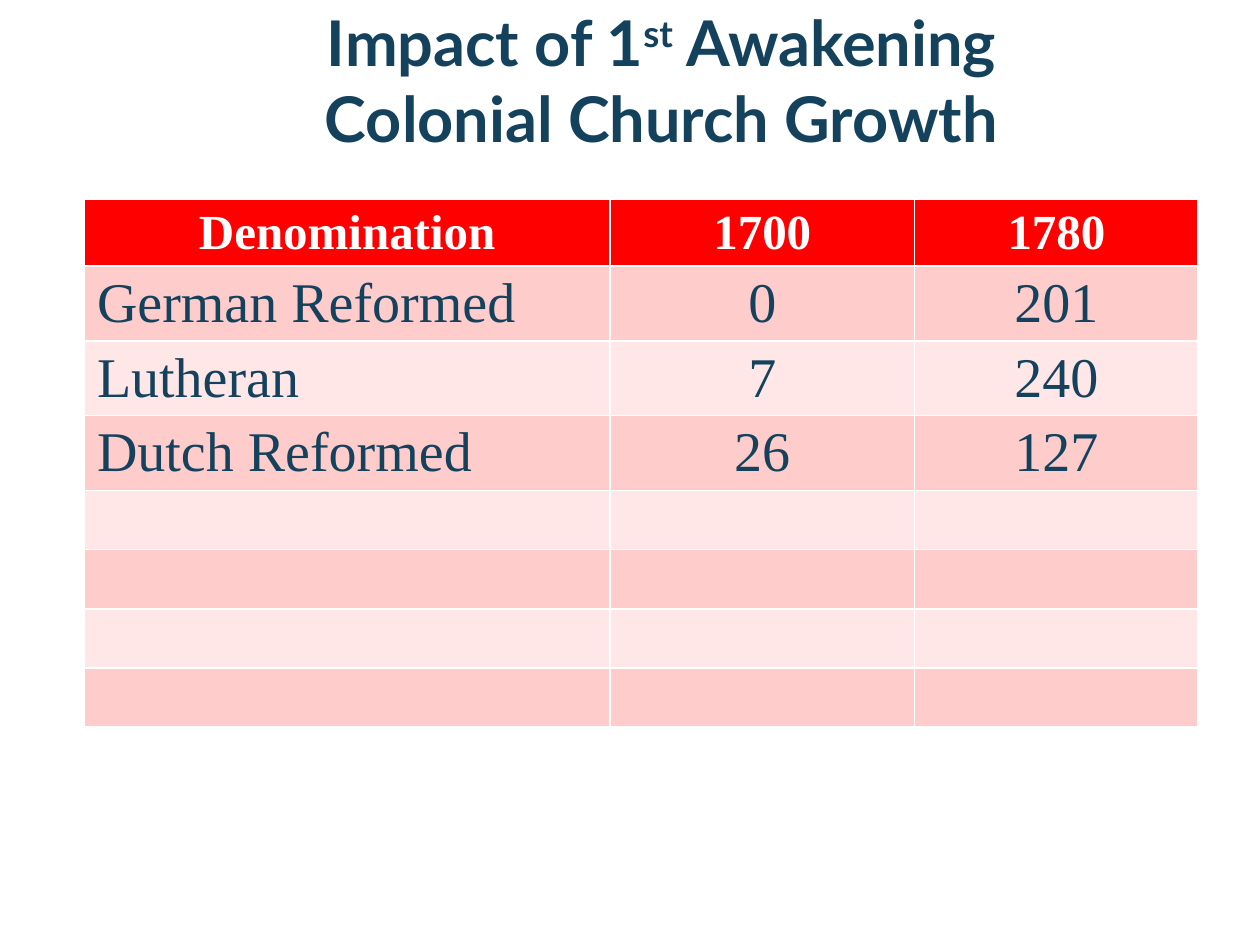
from pptx import Presentation
from pptx.dml.color import RGBColor
from pptx.enum.text import MSO_ANCHOR, PP_ALIGN
from pptx.util import Inches, Pt

CENTER = PP_ALIGN.CENTER
LEFT = PP_ALIGN.LEFT
BOTTOM = MSO_ANCHOR.BOTTOM

COLORS = {
    "navy": "14425D",
    "white": "FFFFFF",
    "header": "FF0000",
    "dark_band": "FFCCCC",
    "light_band": "FFE7E7",
}


def add_run(paragraph, text, font_name, size, color, bold):
    run = paragraph.add_run()
    run.text = text
    run.font.name = font_name
    run.font.size = Pt(size)
    run.font.bold = bold
    run.font.color.rgb = RGBColor.from_string(COLORS[color])
    return run


presentation = Presentation()
presentation.slide_width = Inches(10)
presentation.slide_height = Inches(7.5)
slide = presentation.slides.add_slide(presentation.slide_layouts[5])

title = slide.shapes.title
title.left, title.top = Inches(1), Inches(0.08)
title.width, title.height = Inches(8.5), Inches(1.25)
title_frame = title.text_frame
title_frame.word_wrap = True
title_frame.vertical_anchor = BOTTOM
title_frame.margin_left = title_frame.margin_right = Inches(0.1)
title_frame.margin_top, title_frame.margin_bottom = Inches(0.05), Inches(0.1)
title_paragraph = title_frame.paragraphs[0]
title_paragraph.alignment = CENTER
add_run(title_paragraph, "Impact of 1", "Lato", 36, "navy", True)
ordinal = add_run(title_paragraph, "st", "Lato", 36, "navy", True)
ordinal.font._element.set("baseline", "30000")
add_run(title_paragraph, " Awakening", "Lato", 36, "navy", True)
title_paragraph.add_line_break()
add_run(title_paragraph, "Colonial Church Growth", "Lato", 36, "navy", True)

church_rows = [
    ("Denomination", "1700", "1780"),
    ("German Reformed", "0", "201"),
    ("Lutheran", "7", "240"),
    ("Dutch Reformed", "26", "127"),
] + [("", "", "")] * 4
column_widths = [4.17, 2.42, 2.25]
row_heights = [0.53] + [0.59] * 3 + [0.47] * 4

table = slide.shapes.add_table(
    len(church_rows), len(column_widths), Inches(0.67), Inches(1.58),
    Inches(sum(column_widths)), Inches(sum(row_heights)),
).table
for column, width in zip(table.columns, column_widths):
    column.width = Inches(width)

for row_index, (values, height) in enumerate(zip(church_rows, row_heights)):
    table.rows[row_index].height = Inches(height)
    is_header = row_index == 0
    band = "header" if is_header else "dark_band" if row_index % 2 else "light_band"
    for column_index, value in enumerate(values):
        cell = table.cell(row_index, column_index)
        cell.fill.solid()
        cell.fill.fore_color.rgb = RGBColor.from_string(COLORS[band])
        if value:
            paragraph = cell.text_frame.paragraphs[0]
            paragraph.alignment = CENTER if is_header or column_index else LEFT
            add_run(paragraph, value, "Times New Roman", 28 if is_header else 32,
                    "white" if is_header else "navy", is_header)

presentation.save("out.pptx")
